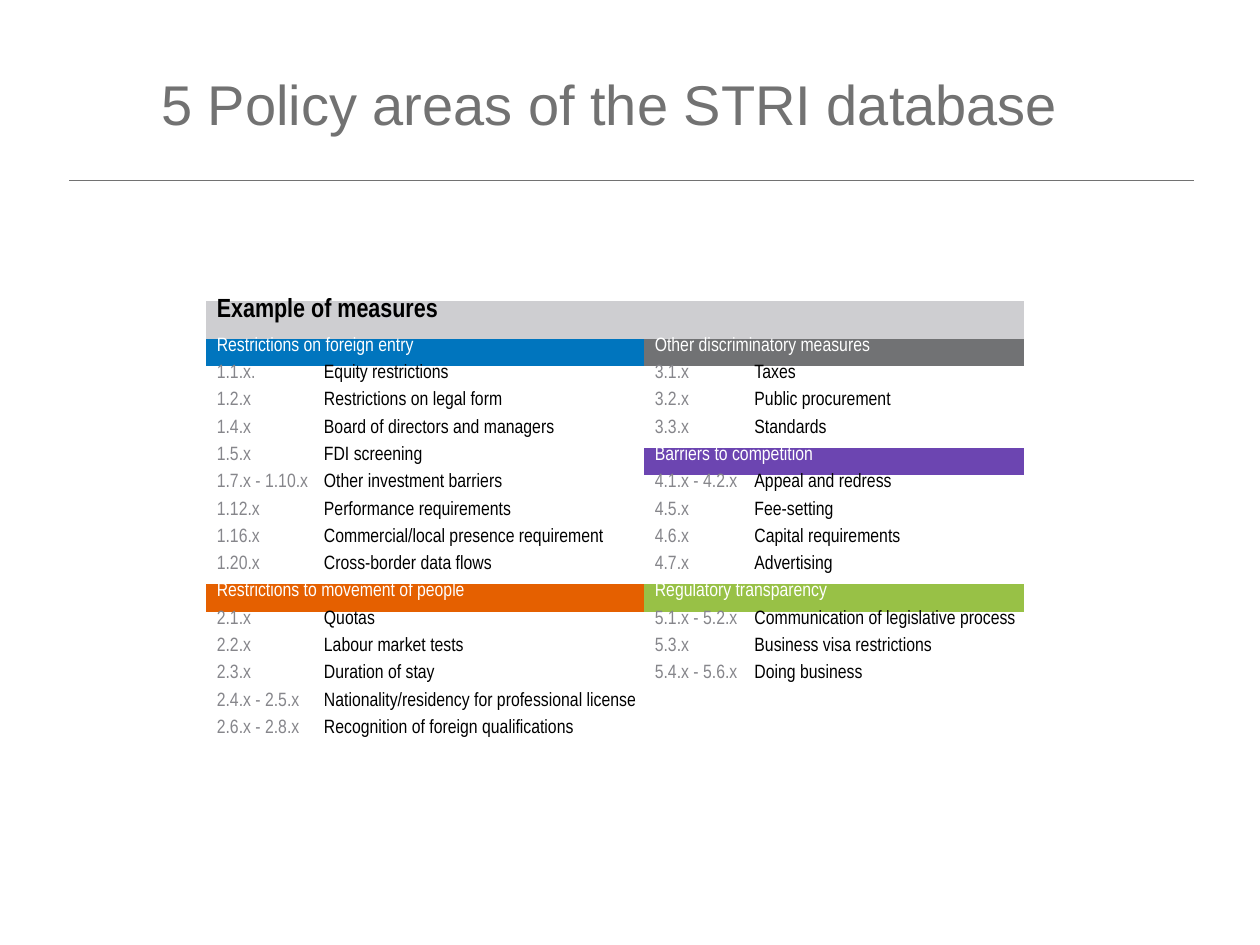
from lxml import etree
from pptx import Presentation
from pptx import util as u
from pptx.dml import color
from pptx.enum import shapes, text
from pptx.oxml import ns

COLORS = {
    "title": "727272", "header": "CECED1", "code": "86868B",
    "text": "000000", "white": "FFFFFF", "entry": "0075BE",
    "people": "E56000", "other": "717274", "competition": "6C45B1",
    "transparency": "98C146",
}
NO_GRID = "{2D5ABB26-0587-4C30-8999-92F81FD0307C}"
COLUMN_WIDTHS = (2.16, 6.67, 2.01, 5.65)
HEADER_HEIGHT, ROW_HEIGHT, ROW_COUNT = 0.76, 0.55, 16

LEFT_AREAS = [
    ("Restrictions on foreign entry", "entry", [
        ("1.1.x.", "Equity restrictions"),
        ("1.2.x", "Restrictions on legal form"),
        ("1.4.x", "Board of directors and managers"),
        ("1.5.x", "FDI screening"),
        ("1.7.x - 1.10.x", "Other investment barriers"),
        ("1.12.x", "Performance requirements"),
        ("1.16.x", "Commercial/local presence requirement"),
        ("1.20.x", "Cross-border data flows"),
    ]),
    ("Restrictions to movement of people", "people", [
        ("2.1.x", "Quotas"),
        ("2.2.x", "Labour market tests"),
        ("2.3.x", "Duration of stay"),
        ("2.4.x - 2.5.x", "Nationality/residency for professional license"),
        ("2.6.x - 2.8.x", "Recognition of foreign qualifications"),
    ]),
]
RIGHT_AREAS = [
    ("Other discriminatory measures", "other", [
        ("3.1.x", "Taxes"),
        ("3.2.x", "Public procurement"),
        ("3.3.x", "Standards"),
    ]),
    ("Barriers to competition", "competition", [
        ("4.1.x - 4.2.x", "Appeal and redress"),
        ("4.5.x", "Fee-setting"),
        ("4.6.x", "Capital requirements"),
        ("4.7.x", "Advertising"),
    ]),
    ("Regulatory transparency", "transparency", [
        ("5.1.x - 5.2.x", "Communication of legislative process"),
        ("5.3.x", "Business visa restrictions"),
        ("5.4.x - 5.6.x", "Doing business"),
    ]),
]


def rgb(name):
    return color.RGBColor.from_string(COLORS[name])


def add_run(p, words, size, name, font, bold=False):
    r = p.add_run()
    r.text = words
    r.font.size = u.Pt(size)
    r.font.name = font
    r.font.bold = bold
    r.font.color.rgb = rgb(name)


def add_title(s, left, top, width, height):
    sp = s.shapes.add_textbox(u.Cm(left), u.Cm(top), u.Cm(width), u.Cm(height))
    tf = sp.text_frame
    tf.word_wrap = True
    tf.vertical_anchor = text.MSO_ANCHOR.MIDDLE
    add_run(tf.paragraphs[0], "5 Policy areas of the STRI database", 32, "title", "Arial")


def add_rule(s, left, top, width):
    line = s.shapes.add_connector(
        shapes.MSO_CONNECTOR.STRAIGHT,
        u.Cm(left), u.Cm(top), u.Cm(left + width), u.Cm(top))
    line.line.color.rgb = rgb("title")
    line.line.width = u.Pt(0.5)
    etree.SubElement(line._element.spPr, ns.qn("a:effectLst"))


def prepare_cell(cell):
    cell.margin_left = u.Cm(0.22)
    cell.margin_top = cell.margin_right = u.Cm(0.02)
    cell.margin_bottom = 0
    cell.fill.solid()
    cell.fill.fore_color.rgb = rgb("white")
    p = cell.text_frame.paragraphs[0]
    p.line_spacing = 0.8
    etree.SubElement(p._p, ns.qn("a:endParaRPr"), sz="1100")


def write_cell(cell, words, name, size=11, bold=False):
    add_run(cell.text_frame.paragraphs[0], words, size, name, "Arial Narrow", bold)


def write_heading(first, last, words, fill, name="white", size=11, bold=False):
    first.merge(last)
    first.fill.fore_color.rgb = rgb(fill)
    write_cell(first, words, name, size, bold)


def fill_areas(table, areas, column):
    row = 1
    for heading, fill, measures in areas:
        write_heading(table.cell(row, column), table.cell(row, column + 1), heading, fill)
        for row, (code, measure) in enumerate(measures, row + 1):
            write_cell(table.cell(row, column), code, "code")
            write_cell(table.cell(row, column + 1), measure, "text")
        row += 1


def add_measures(s, left, top):
    height = HEADER_HEIGHT + (ROW_COUNT - 1) * ROW_HEIGHT
    frame = s.shapes.add_table(
        ROW_COUNT, len(COLUMN_WIDTHS),
        u.Cm(left), u.Cm(top), u.Cm(sum(COLUMN_WIDTHS)), u.Cm(height))
    table = frame.table
    table.first_row = table.horz_banding = False
    table._tbl.tblPr.find(ns.qn("a:tableStyleId")).text = NO_GRID
    for column, width in zip(table.columns, COLUMN_WIDTHS):
        column.width = u.Cm(width)
    for i, row in enumerate(table.rows):
        row.height = u.Cm(ROW_HEIGHT if i else HEADER_HEIGHT)
    for cell in table.iter_cells():
        prepare_cell(cell)
    write_heading(table.cell(0, 0), table.cell(0, 3), "Example of measures",
                  "header", "text", 15, True)
    fill_areas(table, LEFT_AREAS, 0)
    fill_areas(table, RIGHT_AREAS, 2)


def main():
    prs = Presentation()
    prs.slide_width, prs.slide_height = u.Cm(25.4), u.Cm(19.05)
    s = prs.slides.add_slide(prs.slide_layouts[6])
    add_rule(s, 1.4, 3.63, 22.66)
    add_title(s, 3, 0.66, 20.6, 2.84)
    add_measures(s, 4.15, 6.07)
    prs.save("out.pptx")


if __name__ == "__main__":
    main()
